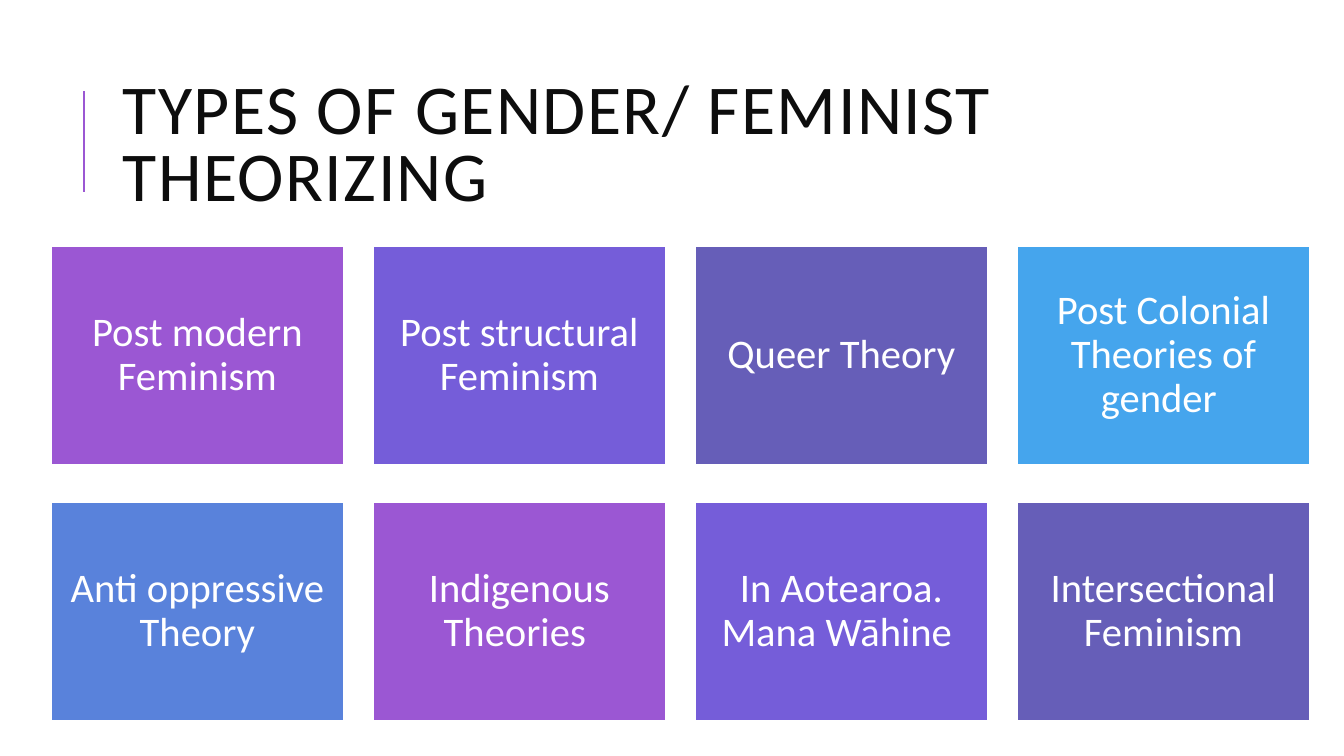
from pptx import Presentation
from pptx.dml.color import RGBColor
from pptx.enum.shapes import MSO_CONNECTOR, MSO_SHAPE
from pptx.enum.text import MSO_ANCHOR, MSO_AUTO_SIZE, PP_ALIGN
from pptx.oxml.ns import qn
from pptx.util import Pt
from lxml.etree import SubElement

SCALE = 914400 / 100.8  # EMU in one px


def px(*nums):
    return [round(n * SCALE) for n in nums]


def rgb(code):
    return RGBColor.from_string(code)


def put(obj, form):
    for key, val in form.items():
        setattr(obj, key, val)


class Deck:
    font = "Calibri"
    dark, white = "0D0D0D", "FFFFFF"
    hues = ["9B57D3", "755DD9", "665EB8", "45A5ED", "5982DB"]

    def __init__(self, wide, high):
        self.prs = Presentation()
        put(self.prs, dict(zip(("slide_width", "slide_height"), px(wide, high))))
        self.slide = self.prs.slides.add_slide(self.prs.slide_layouts[5])

    def label(self, shape, text, size, color, align, space, inset):
        frame = shape.text_frame
        pad = px(inset)[0]
        put(frame, {"text": text, "word_wrap": True,
                    "auto_size": MSO_AUTO_SIZE.NONE,
                    "vertical_anchor": MSO_ANCHOR.MIDDLE,
                    "margin_left": pad, "margin_right": pad,
                    "margin_top": pad, "margin_bottom": pad})
        para = frame.paragraphs[0]
        put(para, {"alignment": align, "line_spacing": space})
        run = para.runs[0]
        put(run.font, {"name": self.font, "size": Pt(size)})
        run.font.color.rgb = rgb(color)
        return run

    def title(self, text, *box):
        shape = self.slide.shapes.title
        put(shape, dict(zip(("left", "top", "width", "height"), px(*box))))
        run = self.label(shape, text, 50, self.dark, PP_ALIGN.LEFT, 0.8, 10)
        run._r.get_or_add_rPr().set("spc", "100")

    def rule(self, color, *ends):
        line = self.slide.shapes.add_connector(MSO_CONNECTOR.STRAIGHT, *px(*ends))
        line.line.color.rgb = rgb(color)
        line.line.width = Pt(1.5)
        SubElement(line._element.spPr, qn("a:effectLst"))

    def tile(self, text, color, *box):
        shape = self.slide.shapes.add_shape(MSO_SHAPE.RECTANGLE, *px(*box))
        shape.shadow.inherit = False
        shape.fill.solid()
        shape.fill.fore_color.rgb = rgb(color)
        shape.line.color.rgb = rgb(self.white)
        shape.line.width = Pt(1.25)
        self.label(shape, text, 29, self.white, PP_ALIGN.CENTER, 0.9, 12)

    def save(self):
        self.prs.save("out.pptx")


def main():
    deck = Deck(1344, 756)

    # Heading with its side rule
    deck.rule(deck.hues[0], 84, 192, 84, 91)
    deck.title("TYPES OF GENDER/ FEMINIST THEORIZING", 113, 65, 1072, 165)

    # Grid of theories, four to a row, hues in turn
    names = ["Post modern Feminism", "Post structural Feminism",
             "Queer Theory", "Post Colonial Theories of gender ",
             "Anti oppressive Theory", "Indigenous Theories ",
             "In Aotearoa. Mana Wāhine ", "Intersectional Feminism"]
    for i, name in enumerate(names):
        row, col = divmod(i, 4)
        hue = deck.hues[i % len(deck.hues)]
        deck.tile(name, hue, 51 + 322 * col, 246 + 256 * row, 293, 219)

    deck.save()


if __name__ == "__main__":
    main()
